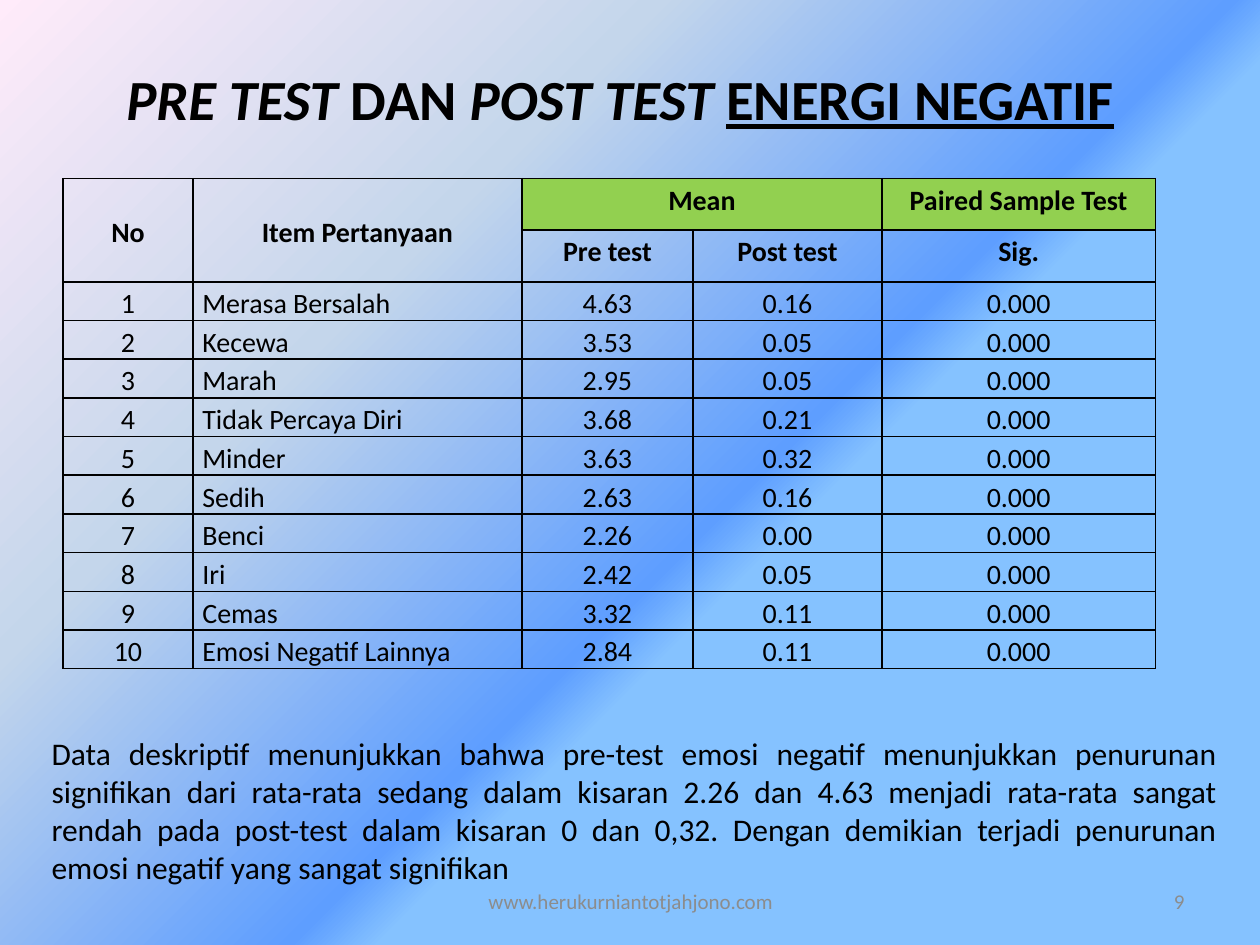
from lxml import etree
from pptx import Presentation
from pptx.dml.color import RGBColor as Color
from pptx.enum.text import MSO_ANCHOR as Anchor, PP_ALIGN as Align
from pptx.oxml import parse_xml
from pptx.oxml.ns import nsdecls, qn
from pptx.util import Cm, Pt

BLACK = Color(0, 0, 0)
GREY = Color(0x8C, 0x8C, 0x8C)
GREEN = Color(0x92, 0xD0, 0x50)
PINK = Color(0xFF, 0xEB, 0xFA)
PALE = Color(0xC4, 0xD6, 0xEB)
BLUE = Color(0x5E, 0x9E, 0xFF)
SKY = Color(0x85, 0xC2, 0xFF)

ITEMS = [
    ("Merasa Bersalah", "4.63", "0.16"),
    ("Kecewa", "3.53", "0.05"),
    ("Marah", "2.95", "0.05"),
    ("Tidak Percaya Diri", "3.68", "0.21"),
    ("Minder", "3.63", "0.32"),
    ("Sedih", "2.63", "0.16"),
    ("Benci", "2.26", "0.00"),
    ("Iri", "2.42", "0.05"),
    ("Cemas", "3.32", "0.11"),
    ("Emosi Negatif Lainnya", "2.84", "0.11"),
]
HEAD = [
    ("No", "Item Pertanyaan", "Mean", "", "Paired Sample Test"),
    ("", "", "Pre test", "Post test", "Sig."),
]
ROWS = HEAD + [(str(n), name, pre, post, "0.000")
               for n, (name, pre, post) in enumerate(ITEMS, 1)]
WIDTHS = [2.62, 6.63, 3.45, 3.81, 5.51]
NOTE = (
    "Data deskriptif menunjukkan bahwa pre-test emosi negatif menunjukkan "
    "penurunan signifikan dari rata-rata sedang dalam kisaran 2.26 dan 4.63 "
    "menjadi rata-rata sangat rendah pada post-test dalam kisaran 0 dan 0,32. "
    "Dengan demikian terjadi penurunan emosi negatif yang sangat signifikan"
)


class Deck:
    face = "Calibri"

    def __init__(self, wide, high):
        self.prs = Presentation()
        self.prs.slide_width, self.prs.slide_height = Cm(wide), Cm(high)
        self.slide = self.prs.slides.add_slide(self.prs.slide_layouts[6])

    def style(self, para, size, color=BLACK, bold=False, align=Align.CENTER):
        para.alignment = align
        font = para.font
        font.name, font.size, font.bold = self.face, Pt(size), bold
        font.color.rgb = color

    def back(self, stops):
        """Fill the background with a diagonal gradient of (percent, colour)."""
        fill = self.slide.background.fill
        fill.gradient()
        fill.gradient_angle = 315
        stop_list = self.slide.element.find(".//" + qn("a:gsLst"))
        for old in list(stop_list):
            stop_list.remove(old)
        for pos, color in stops:
            stop = etree.SubElement(stop_list, qn("a:gs"), pos=str(pos * 1000))
            etree.SubElement(stop, qn("a:srgbClr"), val=str(color))

    def text(self, box, runs, size, anchor=Anchor.MIDDLE, **look):
        """Add one paragraph of (text, italic, underline) runs."""
        frame = self.slide.shapes.add_textbox(*map(Cm, box)).text_frame
        frame.word_wrap = True
        frame.vertical_anchor = anchor
        para = frame.paragraphs[0]
        self.style(para, size, **look)
        for words, slant, under in runs:
            run = para.add_run()
            run.text = words
            if slant:
                run.font.italic = True
            if under:
                run.font.underline = True

    def plain(self, box, words, size, **look):
        self.text(box, [(words, False, False)], size, **look)

    def edge(self, cell):
        """Draw a thin black line on all four sides of a cell."""
        props = cell._tc.get_or_add_tcPr()
        for i, side in enumerate(("lnL", "lnR", "lnT", "lnB")):
            props.insert(i, parse_xml(
                f'<a:{side} {nsdecls("a")} w="12700"><a:solidFill>'
                f'<a:srgbClr val="{BLACK}"/></a:solidFill></a:{side}>'))

    def table(self, left, top, widths, heights, rows):
        box = map(Cm, (left, top, sum(widths), sum(heights)))
        grid = self.slide.shapes.add_table(len(rows), len(widths), *box).table
        grid.first_row = grid.horz_banding = False
        for col, wide in zip(grid.columns, widths):
            col.width = Cm(wide)
        for row, high in zip(grid.rows, heights):
            row.height = Cm(high)
        for r, row in enumerate(rows):
            for c, words in enumerate(row):
                self.cell(grid.cell(r, c), words, r, c, r == len(rows) - 1)
        for start, end in (((0, 0), (1, 0)), ((0, 1), (1, 1)), ((0, 2), (0, 3))):
            grid.cell(*start).merge(grid.cell(*end))

    def cell(self, cell, words, r, c, last):
        head = r < len(HEAD)
        cell.margin_left = cell.margin_right = Cm(0.19)
        cell.margin_top = cell.margin_bottom = 0
        mid = last or (head and c < 2)
        cell.vertical_anchor = Anchor.MIDDLE if mid else Anchor.TOP
        if r == 0 and c >= 2:
            cell.fill.solid()
            cell.fill.fore_color.rgb = GREEN
        else:
            cell.fill.background()
        self.edge(cell)
        para = cell.text_frame.paragraphs[0]
        para.text = words
        para.line_spacing = 1.15
        side = Align.LEFT if c == 1 and not head else Align.CENTER
        self.style(para, 16, bold=head, align=side)


def main():
    deck = Deck(25.4, 19.05)
    deck.back([(0, PINK), (30, PALE), (56, BLUE), (60, SKY)])
    title = [("PRE TEST ", True, False), ("DAN ", False, False),
             ("POST TEST ", True, False), ("ENERGI NEGATIF", False, True)]
    deck.text((1.07, 1.27, 22.86, 1.42), title, 32.4, bold=True)
    deck.plain((0.79, 14.68, 24, 3.33), NOTE, 18,
               anchor=Anchor.TOP, align=Align.JUSTIFY)
    heights = [1.04] * len(HEAD) + [0.78] * len(ITEMS)
    deck.table(1.27, 3.6, WIDTHS, heights, ROWS)
    deck.plain((18.21, 17.65, 5.92, 1.02), "9", 12, color=GREY, align=Align.RIGHT)
    deck.plain((8.69, 17.65, 8.05, 1.02), "www.herukurniantotjahjono.com", 12,
               color=GREY)
    deck.prs.save("out.pptx")


if __name__ == "__main__":
    main()
